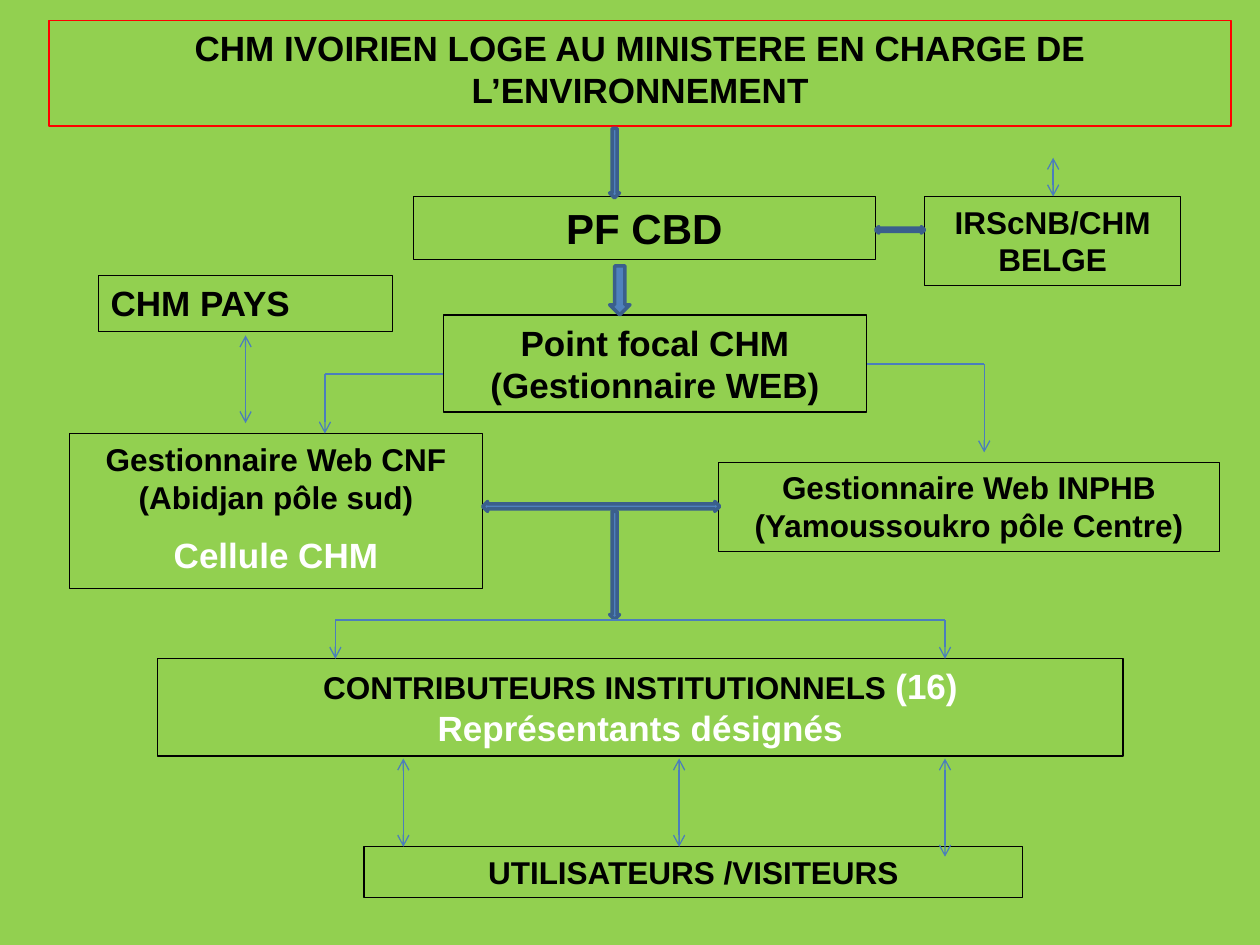
from dataclasses import dataclass

from lxml import etree
from pptx import Presentation
from pptx.dml.color import RGBColor
from pptx.enum.shapes import MSO_CONNECTOR, MSO_SHAPE
from pptx.enum.text import MSO_ANCHOR, PP_ALIGN
from pptx.oxml.ns import qn
from pptx.util import Cm, Pt

RECT = MSO_SHAPE.RECTANGLE
DOWN = MSO_SHAPE.DOWN_ARROW
BOTH_WAYS = MSO_SHAPE.LEFT_RIGHT_ARROW
STRAIGHT = MSO_CONNECTOR.STRAIGHT
LEFT, CENTER = PP_ALIGN.LEFT, PP_ALIGN.CENTER
TOP = MSO_ANCHOR.TOP


@dataclass(frozen=True)
class Theme:
    font: str = "Arial"
    background: str = "92D050"
    text: str = "000000"
    accent_text: str = "FFFFFF"
    border: str = "000000"
    title_border: str = "FF0000"
    arrow_fill: str = "4F81BD"
    arrow_border: str = "3A5F8C"
    link: str = "4B7EBC"
    small: int = 18
    medium: int = 20
    large: int = 24
    thin: float = 0.75
    thick: float = 2
    gap: float = 10.4


T = Theme()


def small(text):
    return text, T.small, T.text


def medium(text):
    return text, T.medium, T.text


def accent(text):
    return text, T.medium, T.accent_text


# Boxes: left, top, width, height in cm, then paragraphs made of runs
TITLE = ((0.99, 0.41, 23.83, 2.13),
         [[medium("CHM IVOIRIEN LOGE AU MINISTERE EN CHARGE DE L’ENVIRONNEMENT")]])
CHM_PAYS = ((1.98, 5.56, 5.94, 1.12), [[medium("CHM PAYS")]])
CNF = ((1.4, 8.74, 8.33, 3.12),
       [[small("Gestionnaire Web CNF")], [small("(Abidjan pôle sud)")],
        [accent("Cellule CHM")]])
CENTERED_BOXES = [
    ((8.33, 3.96, 9.32, 1.27), [[("PF CBD", T.large, T.text)]]),
    ((18.64, 3.96, 5.16, 1.8), [[small("IRScNB/CHM BELGE")]]),
    ((8.94, 6.35, 8.53, 1.96),
     [[medium("Point focal CHM")], [medium("(Gestionnaire WEB)")]]),
    ((14.48, 9.32, 10.11, 1.8),
     [[small("Gestionnaire Web INPHB")], [small("(Yamoussoukro pôle Centre)")]]),
    ((3.18, 13.28, 19.46, 1.96),
     [[small("CONTRIBUTEURS INSTITUTIONNELS "), accent("(16)")],
      [accent("Représentants désignés")]]),
    ((7.34, 17.07, 13.28, 1.02), [[small("UTILISATEURS /VISITEURS")]]),
]

BLOCK_ARROWS = [
    (DOWN, (12.29, 2.59, 0.2, 1.4)),
    (DOWN, (12.29, 5.36, 0.41, 0.99)),
    (BOTH_WAYS, (17.65, 4.57, 0.99, 0.13)),
    (BOTH_WAYS, (9.73, 10.11, 4.78, 0.2)),
    (DOWN, (12.29, 10.31, 0.2, 2.18)),
]

# Horizontal links: start x, end x, y
BRANCHES = [(6.76, 19.05, 12.5), (17.48, 19.84, 7.34), (8.94, 6.55, 7.54)]
# Vertical links: x, top, bottom
ONE_WAY = [(6.76, 12.5, 13.28), (19.05, 12.5, 13.28),
           (19.84, 7.34, 9.12), (6.55, 7.54, 8.74)]
TWO_WAY = [(4.95, 6.76, 8.53), (21.23, 3.18, 3.96),
           (8.13, 15.29, 17.07), (13.69, 15.29, 17.07), (19.05, 15.29, 17.27)]


def rgb(value):
    return RGBColor.from_string(value)


def add_box(slide, box, align=CENTER, border=T.border):
    place, paragraphs = box
    s = slide.shapes.add_shape(RECT, *map(Cm, place))
    s.shadow.inherit = False
    s.fill.background()
    s.line.color.rgb = rgb(border)
    s.line.width = Pt(T.thin)
    tf = s.text_frame
    tf.word_wrap = True
    tf.vertical_anchor = TOP
    for i, runs in enumerate(paragraphs):
        p = tf.add_paragraph() if i else tf.paragraphs[0]
        p.alignment = align
        for text, size, color in runs:
            r = p.add_run()
            r.text = text
            r.font.name = T.font
            r.font.size = Pt(size)
            r.font.bold = True
            r.font.color.rgb = rgb(color)
    return s


def add_block_arrow(slide, kind, place):
    s = slide.shapes.add_shape(kind, *map(Cm, place))
    s.shadow.inherit = False
    s.fill.solid()
    s.fill.fore_color.rgb = rgb(T.arrow_fill)
    s.line.color.rgb = rgb(T.arrow_border)
    s.line.width = Pt(T.thick)


def add_link(slide, x1, y1, x2, y2, ends=()):
    """Draw a thin line; ends names the line ends with an open arrowhead."""
    s = slide.shapes.add_connector(STRAIGHT, *map(Cm, (x1, y1, x2, y2)))
    s.line.color.rgb = rgb(T.link)
    s.line.width = Pt(T.thin)
    ln = s.line._get_or_add_ln()
    for end in ends:
        etree.SubElement(ln, qn(f"a:{end}"), type="arrow")
    etree.SubElement(s._element.spPr, qn("a:effectLst"))


def main():
    prs = Presentation()
    prs.slide_width, prs.slide_height = Cm(25.4), Cm(19.05)
    slide = prs.slides.add_slide(prs.slide_layouts[6])
    slide.background.fill.solid()
    slide.background.fill.fore_color.rgb = rgb(T.background)

    add_box(slide, TITLE, border=T.title_border)
    add_box(slide, CHM_PAYS, align=LEFT)
    cnf = add_box(slide, CNF)
    cnf.text_frame.paragraphs[-1].space_before = Pt(T.gap)
    for box in CENTERED_BOXES:
        add_box(slide, box)
    for kind, place in BLOCK_ARROWS:
        add_block_arrow(slide, kind, place)
    for x1, x2, y in BRANCHES:
        add_link(slide, x1, y, x2, y)
    for x, top, bottom in ONE_WAY:
        add_link(slide, x, top, x, bottom, ["tailEnd"])
    for x, top, bottom in TWO_WAY:
        add_link(slide, x, top, x, bottom, ["headEnd", "tailEnd"])
    prs.save("out.pptx")


if __name__ == "__main__":
    main()
